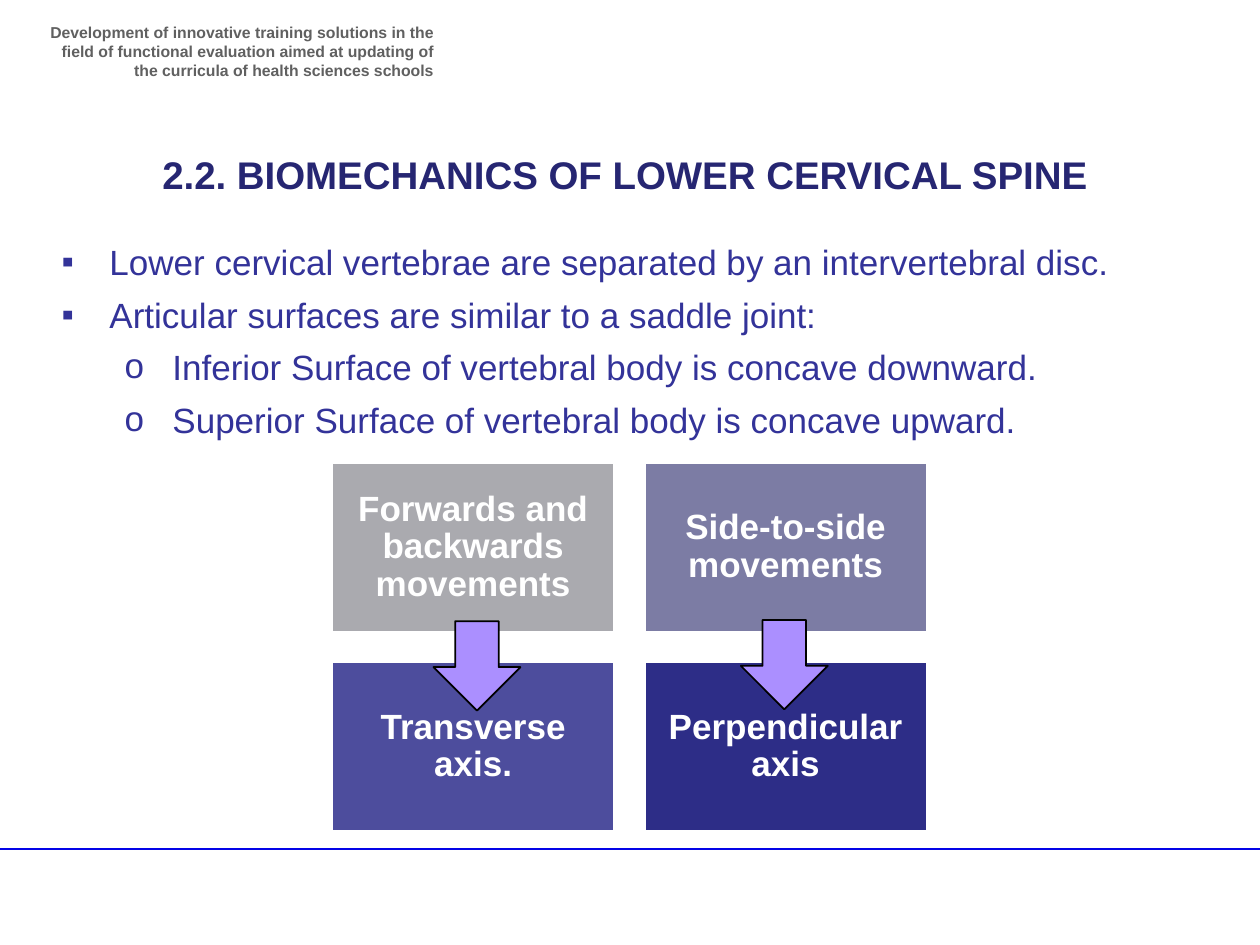
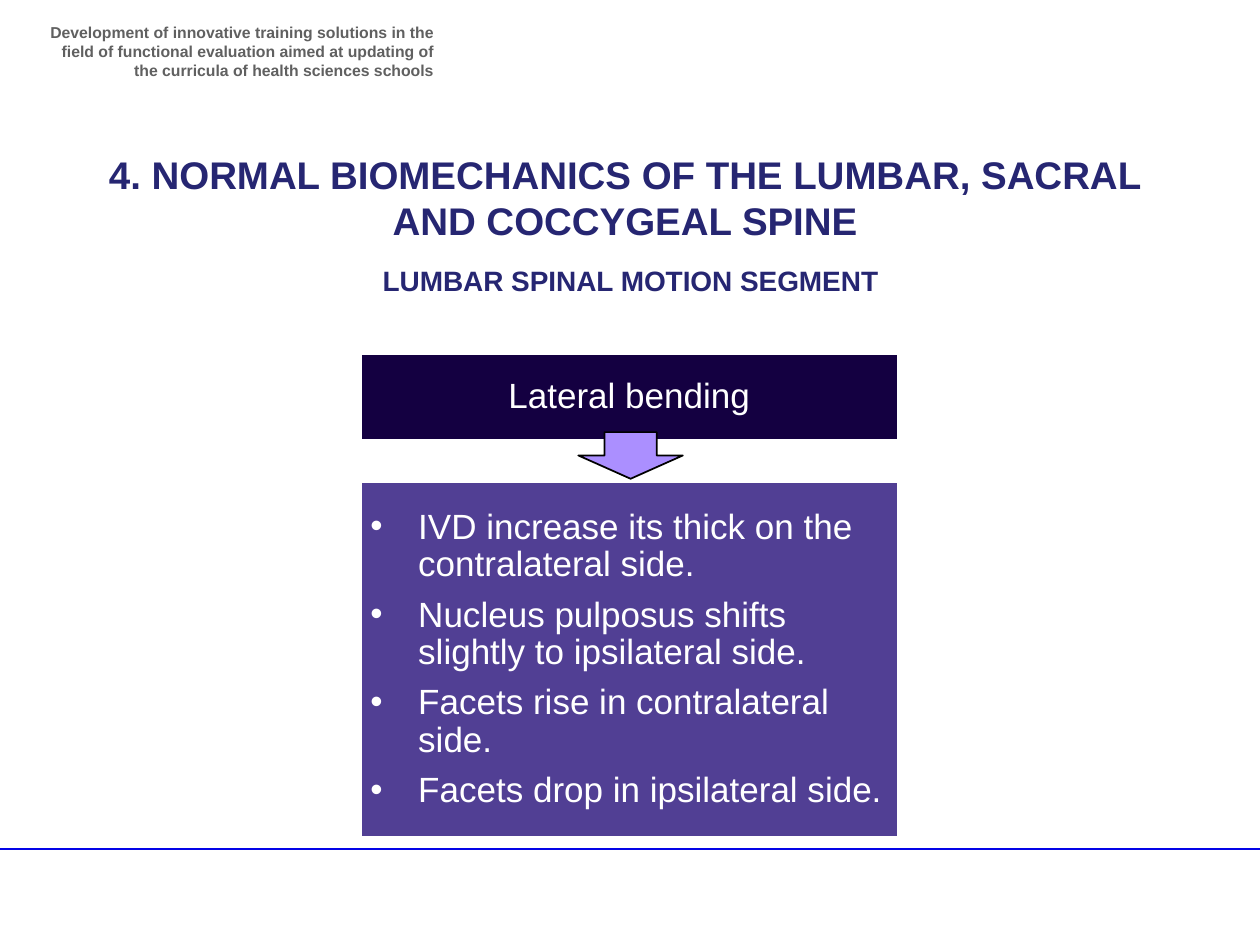
from lxml import etree
from pptx import Presentation
from pptx.dml.color import RGBColor
from pptx.enum.shapes import MSO_CONNECTOR, MSO_SHAPE
from pptx.enum.text import MSO_ANCHOR, MSO_AUTO_SIZE, PP_ALIGN
from pptx.oxml.ns import qn
from pptx.util import Inches, Pt

LEFT, CENTER, RIGHT = PP_ALIGN.LEFT, PP_ALIGN.CENTER, PP_ALIGN.RIGHT
TOP, MIDDLE = MSO_ANCHOR.TOP, MSO_ANCHOR.MIDDLE
RECT, DOWN_ARROW = MSO_SHAPE.RECTANGLE, MSO_SHAPE.DOWN_ARROW

FONT = "Arial"
COLORS = {
    "rule": "0404E6", "header": "606060", "title": "262672", "body": "333399",
    "white": "FFFFFF", "black": "000000", "arrow": "AB8FFF",
    "gray": "AAAAAF", "slate": "7C7CA4", "indigo": "4D4D9D", "navy": "2D2D87",
    "midnight": "140041", "violet": "513F94",
}

HEADER = ("Development of innovative training solutions in the ﬁeld of functional "
          "evaluation aimed at updating of the curricula of health sciences schools")

CERVICAL_TITLE = "2.2. BIOMECHANICS OF LOWER CERVICAL SPINE"
# (bullet, text indent in inches, text)
CERVICAL_POINTS = [
    ("▪", 0.38, "Lower cervical vertebrae are separated by an intervertebral disc."),
    ("▪", 0.38, "Articular surfaces are similar to a saddle joint:"),
    ("o", 0.88, "Inferior Surface of vertebral body is concave downward."),
    ("o", 0.88, "Superior Surface of vertebral body is concave upward."),
]
# One column per movement: (text, fill) from top to bottom
MOVEMENT_COLUMNS = [
    [("Forwards and backwards movements", "gray"), ("Transverse axis.", "indigo")],
    [("Side-to-side movements", "slate"), ("Perpendicular axis", "navy")],
]
MOVEMENT_ARROWS = [(3.44, 4.93), (5.88, 4.92)]

LUMBAR_TITLE = "4. NORMAL BIOMECHANICS OF THE LUMBAR, SACRAL AND COCCYGEAL SPINE"
LUMBAR_SUBTITLE = "LUMBAR SPINAL MOTION SEGMENT"
BENDING = "Lateral bending"
BENDING_EFFECTS = [
    ("•", 0.38, "IVD increase its thick on the contralateral side."),
    ("•", 0.38, "Nucleus pulposus shifts slightly to ipsilateral side."),
    ("•", 0.38, "Facets rise in contralateral side."),
    ("•", 0.38, "Facets drop in ipsilateral side."),
]

HANG = 0.38


def rgb(name):
    return RGBColor.from_string(COLORS[name])


def box(*lengths):
    return [Inches(v) for v in lengths]


def set_bullet(p, char, indent, color):
    pPr = p._p.get_or_add_pPr()
    pPr.set("marL", str(Inches(indent)))
    pPr.set("indent", str(-Inches(HANG)))
    clr = etree.SubElement(pPr, qn("a:buClr"))
    etree.SubElement(clr, qn("a:srgbClr"), val=COLORS[color])
    etree.SubElement(pPr, qn("a:buFont"), typeface=FONT)
    etree.SubElement(pPr, qn("a:buChar"), char=char)


def write(shape, items, size, color, bold=False, align=CENTER, anchor=TOP,
          inset=(0.1, 0.05), line_spacing=None, gap=0):
    """Fill a shape with paragraphs, each a string or (bullet, indent, text)."""
    tf = shape.text_frame
    tf.auto_size = MSO_AUTO_SIZE.NONE
    tf.word_wrap = True
    tf.vertical_anchor = anchor
    tf.margin_left = tf.margin_right = Inches(inset[0])
    tf.margin_top = tf.margin_bottom = Inches(inset[1])
    for i, item in enumerate(items):
        p = tf.paragraphs[0] if i == 0 else tf.add_paragraph()
        if isinstance(item, str):
            text = item
        else:
            char, indent, text = item
            set_bullet(p, char, indent, color)
        p.alignment = align
        p.space_before = Pt(gap if i else 0)
        if line_spacing:
            p.line_spacing = line_spacing
        r = p.add_run()
        r.text = text
        r.font.name, r.font.size, r.font.bold = FONT, Pt(size), bold
        r.font.color.rgb = rgb(color)


def add_text(s, at, items, size, color, **style):
    write(s.shapes.add_textbox(*box(*at)), items, size, color, **style)


def add_shape(s, kind, at, fill, line, width):
    sp = s.shapes.add_shape(kind, *box(*at))
    sp.shadow.inherit = False
    sp.fill.solid()
    sp.fill.fore_color.rgb = rgb(fill)
    sp.line.color.rgb = rgb(line)
    sp.line.width = Pt(width)
    return sp


def add_block(s, at, fill, items, **style):
    sp = add_shape(s, RECT, at, fill, "white", 2)
    write(sp, items, 20, "white", anchor=MIDDLE, inset=(0.08, 0.08),
          line_spacing=0.9, **style)


def add_arrow(s, *at):
    add_shape(s, DOWN_ARROW, at, "arrow", "black", 1)


def add_slide(prs, title, title_height):
    """Add a slide with the shared rule, header and title."""
    s = prs.slides.add_slide(prs.slide_layouts[5])
    rule = s.shapes.add_connector(MSO_CONNECTOR.STRAIGHT, *box(-0.05, 6.74, 10, 6.74))
    rule.line.color.rgb = rgb("rule")
    rule.line.width = Pt(1)
    etree.SubElement(rule._element.spPr, qn("a:effectLst"))
    add_text(s, (0.28, 0.13, 3.26, 0.47), [HEADER], 9, "header", bold=True, align=RIGHT)
    sp = s.shapes.title
    sp.left, sp.top, sp.width, sp.height = box(0.67, 1.15, 8.58, title_height)
    write(sp, [title], 22, "title", bold=True)
    return s


def build_cervical(prs):
    s = add_slide(prs, CERVICAL_TITLE, 0.47)
    add_text(s, (0.39, 1.86, 9.21, 1.7), CERVICAL_POINTS, 20, "body", align=LEFT, gap=6)
    left, top, width, height = 2.63, 3.67, 2.25, 1.35
    step_x, step_y = 2.48, 1.58
    for col, blocks in enumerate(MOVEMENT_COLUMNS):
        for row, (text, fill) in enumerate(blocks):
            at = (left + col * step_x, top + row * step_y, width, height)
            add_block(s, at, fill, [text], bold=True)
    for x, y in MOVEMENT_ARROWS:
        add_arrow(s, x, y, 0.69, 0.71)


def build_lumbar(prs):
    s = add_slide(prs, LUMBAR_TITLE, 0.84)
    add_text(s, (2.17, 2.04, 5.67, 0.37), [LUMBAR_SUBTITLE], 16, "title", bold=True)
    left, width = 2.86, 4.27
    add_block(s, (left, 2.8, width, 0.7), "midnight", [BENDING])
    add_block(s, (left, 3.82, width, 2.83), "violet", BENDING_EFFECTS, align=LEFT, gap=7)
    add_arrow(s, 4.59, 3.43, 0.83, 0.37)


def main():
    prs = Presentation()
    prs.slide_width, prs.slide_height = box(10, 7.5)
    build_cervical(prs)
    build_lumbar(prs)
    prs.save("out.pptx")


if __name__ == "__main__":
    main()
